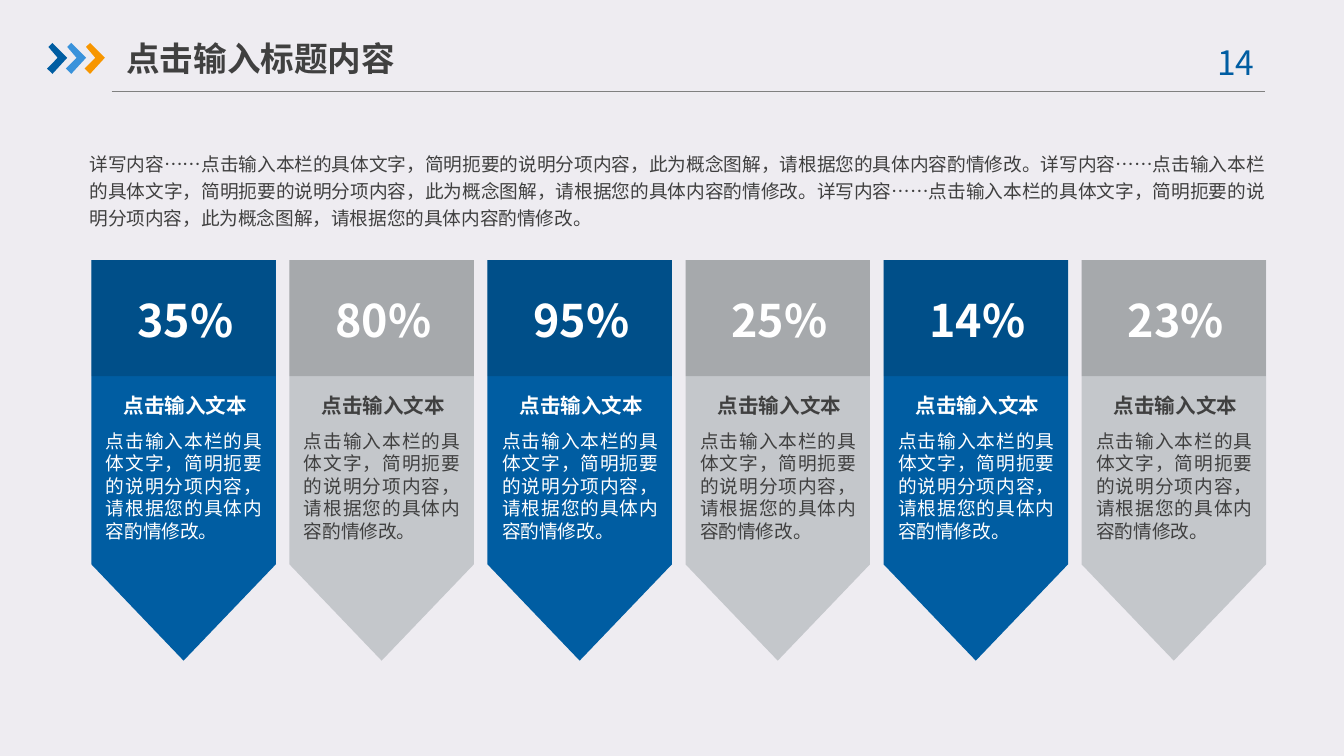
from lxml import etree
from pptx import Presentation, util as u
from pptx.dml.color import RGBColor
from pptx.enum import shapes, text
from pptx.oxml.ns import qn

W = 10
H = W * 9 / 16
FONT = "Noto Sans CJK SC"
COLORS = {"bg": "EEECF1", "blue": "005DA2", "sky": "3992DB", "orange": "F79600",
          "silver": "C4C7CB", "dark": "404040", "white": "FFFFFF",
          "rule": "808080", "shade": "000000"}
INTRO = "详写内容……点击输入本栏的具体文字，简明扼要的说明分项内容，此为概念图解，请根据您的具体内容酌情修改。"
DETAIL = "点击输入本栏的具体文字，简明扼要的说明分项内容，请根据您的具体内容酌情修改。"
VALUES = ["35%", "80%", "95%", "25%", "14%", "23%"]
TIGHT = (0.04, 0.02, 0.04, 0.02)
ALIGN = text.PP_ALIGN


def color(name):
    return RGBColor.from_string(COLORS[name])


def part(box, x, y, w, h):
    """Turn shares of a box into a left, top, width, height in EMU."""
    left, top, width, height = box
    return [u.Inches(v) for v in
            (left + x * width, top + y * height, w * width, h * height)]


def paint(sp, name):
    sp.shadow.inherit = False
    sp.fill.solid()
    sp.fill.fore_color.rgb = color(name)
    sp.line.fill.background()


def write(sp, words, size, name, align, bold=False, insets=TIGHT,
          anchor=text.MSO_ANCHOR.TOP, spacing=None):
    tf = sp.text_frame
    tf.word_wrap = True
    tf.auto_size = text.MSO_AUTO_SIZE.NONE
    tf.vertical_anchor = anchor
    tf.margin_left, tf.margin_top, tf.margin_right, tf.margin_bottom = map(u.Inches, insets)
    p = tf.paragraphs[0]
    p.alignment = align
    p.line_spacing = spacing
    r = p.add_run()
    r.text = words
    r.font.size, r.font.bold, r.font.name = u.Pt(size), bold, FONT
    r.font.color.rgb = color(name)
    # East Asian typeface follows the latin one
    latin = r.font._element.find(qn("a:latin"))
    ea = etree.Element(qn("a:ea"), typeface=FONT)
    latin.addnext(ea)


def add_text(s, place, *args, **kwargs):
    write(s.shapes.add_textbox(*place), *args, **kwargs)


def add_chevron(s, box, name):
    outline = [(0.07, 0.13), (0.27, 0), (1, 0.48), (0.27, 1), (0, 0.83), (0.53, 0.48)]
    points = [tuple(part(box, x, y, 0, 0)[:2]) for x, y in outline]
    builder = s.shapes.build_freeform(*points[0])
    builder.add_line_segments(points[1:], close=True)
    paint(builder.convert_to_shape(), name)


def add_header(s, box):
    left, top, width, height = box
    # Rule under the title
    x, y, w, _ = part(box, 0.083, 0.68, 0.858, 0)
    rule = s.shapes.add_connector(shapes.MSO_CONNECTOR.STRAIGHT, x, y, x + w, y)
    rule.line.color.rgb = color("rule")
    rule.line.width = u.Pt(0.75)
    etree.SubElement(rule._element.spPr, qn("a:effectLst"))
    # Three chevrons
    for i, name in enumerate(("blue", "sky", "orange")):
        add_chevron(s, (left + (0.035 + 0.014 * i) * width, top + 0.32 * height,
                        0.015 * width, 0.23 * height), name)
    # Page number
    add_text(s, part(box, 0.886, 0.26, 0.073, 0.4), "14 ", 18, "blue", ALIGN.CENTER,
             insets=(0.1, 0.05, 0.1, 0.05))
    # Title
    title = s.shapes.title
    title.left, title.top, title.width, title.height = part(box, 0.094, 0.22, 0.233, 0.42)
    write(title, "点击输入标题内容", 18, "dark", ALIGN.LEFT, bold=True,
          insets=(0, 0.05, 0, 0.05), anchor=text.MSO_ANCHOR.MIDDLE)


def add_banner(s, box, value, fill, ink):
    # Pointed body
    arrow = s.shapes.add_shape(shapes.MSO_SHAPE.DOWN_ARROW, *part(box, 0, 0, 1, 1))
    arrow.adjustments[0], arrow.adjustments[1] = 1, 0.522
    paint(arrow, fill)
    # Translucent shade behind the value
    shade = s.shapes.add_shape(shapes.MSO_SHAPE.RECTANGLE, *part(box, 0, 0, 1, 0.29))
    paint(shade, "shade")
    rgb = shade._element.spPr.find(qn("a:solidFill"))[0]
    etree.SubElement(rgb, qn("a:alpha"), val="15000")
    # Value, label and detail
    add_text(s, part(box, 0.11, 0.075, 0.8, 0.15), value, 24, "white", ALIGN.CENTER, bold=True)
    add_text(s, part(box, 0.13, 0.326, 0.76, 0.09), "点击输入文本", 11, ink, ALIGN.CENTER, bold=True)
    add_text(s, part(box, 0.05, 0.417, 0.905, 0.23), DETAIL, 10, ink, ALIGN.JUSTIFY)


def add_banners(s, box):
    left, top, width, height = box
    banner_w = 0.157 * width
    pitch = (width - banner_w) / (len(VALUES) - 1)
    for i, value in enumerate(VALUES):
        fill, ink = (("blue", "white"), ("silver", "dark"))[i % 2]
        add_banner(s, (left + i * pitch, top, banner_w, height), value, fill, ink)


def main():
    prs = Presentation()
    prs.slide_width, prs.slide_height = u.Inches(W), u.Inches(H)
    s = prs.slides.add_slide(prs.slide_layouts[5])
    s.background.fill.solid()
    s.background.fill.fore_color.rgb = color("bg")
    add_header(s, (0, 0, W, 1))
    # Introduction
    add_text(s, part((0, 0, W, H), 0.0625, 0.193, 0.882, 0.125), INTRO * 3, 10, "dark",
             ALIGN.JUSTIFY, spacing=1.2)
    add_banners(s, (0.068 * W, 0.344 * H, 0.874 * W, 0.53 * H))
    prs.save("out.pptx")


if __name__ == "__main__":
    main()
